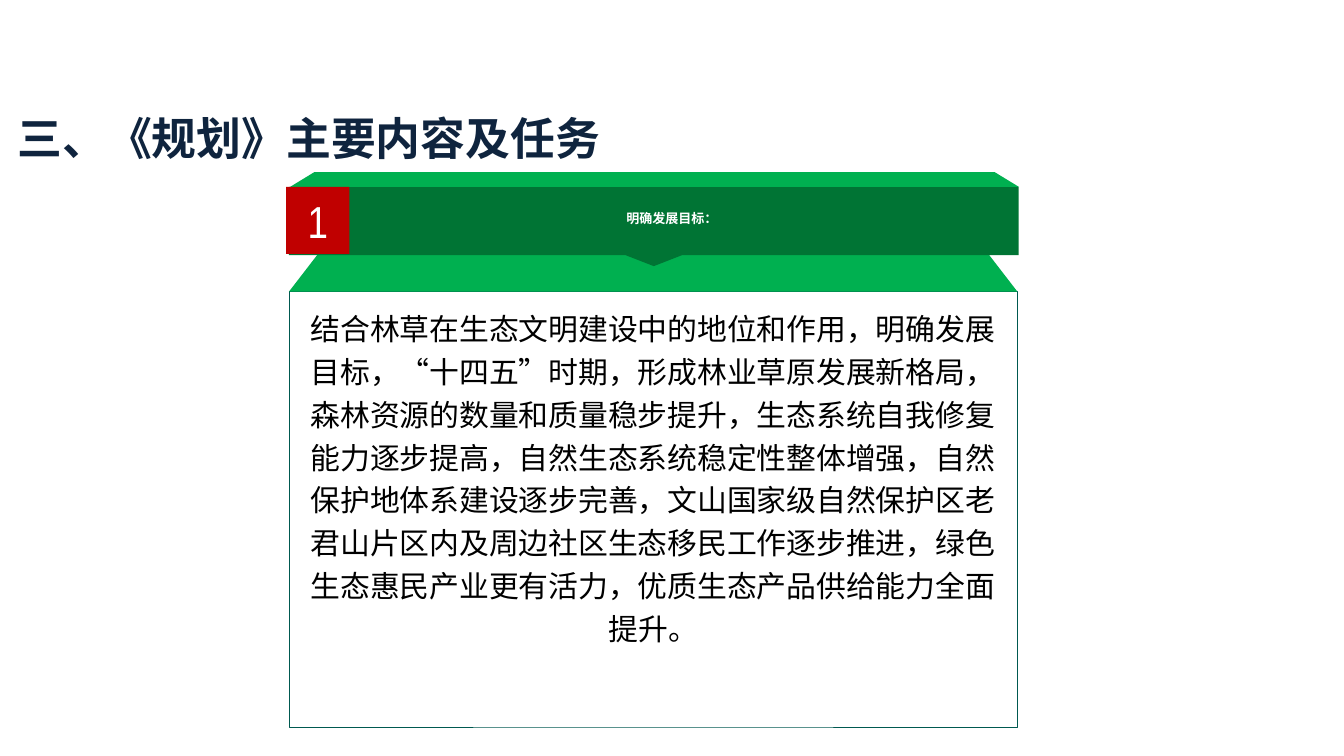
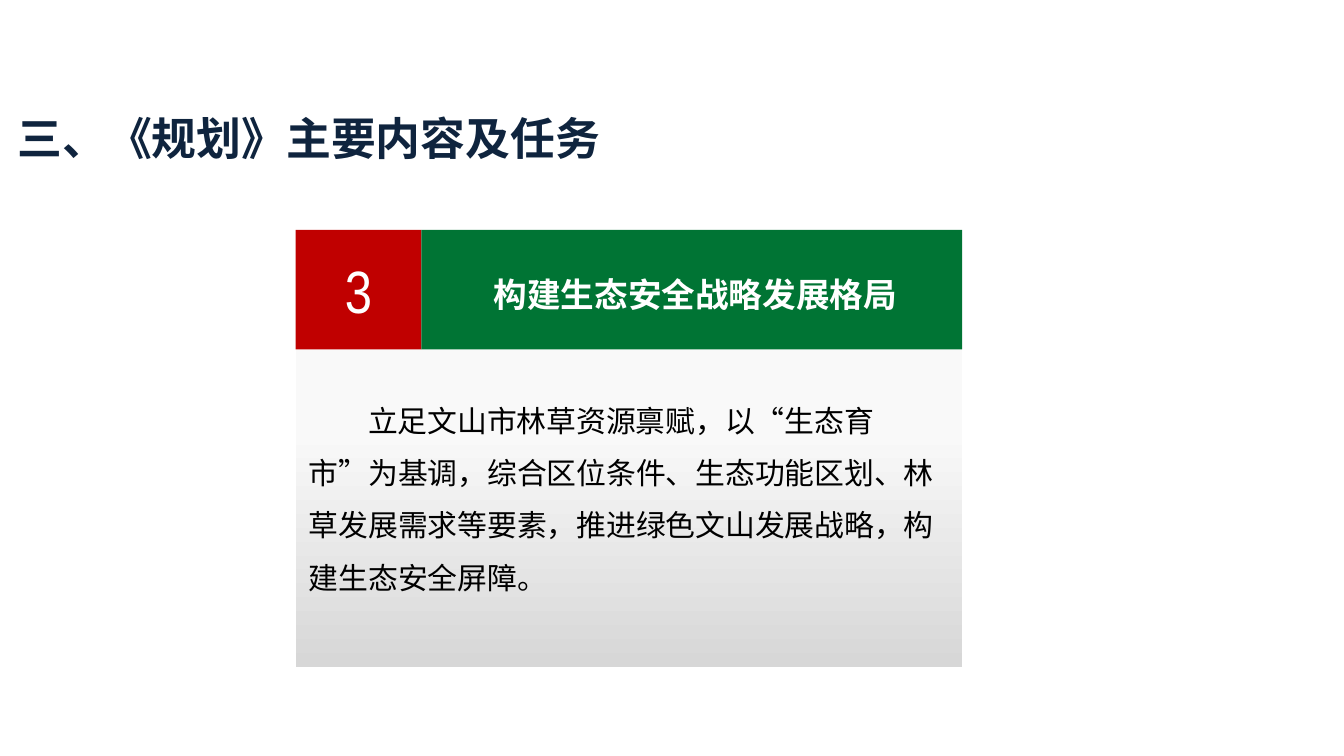
from copy import deepcopy

from pptx import Presentation
from pptx.dml.color import RGBColor
from pptx.enum.lang import MSO_LANGUAGE_ID
from pptx.enum.shapes import MSO_SHAPE
from pptx.enum.text import MSO_ANCHOR, MSO_AUTO_SIZE, PP_ALIGN
from pptx.oxml.ns import qn
from pptx.util import Inches, Pt

RECT = MSO_SHAPE.RECTANGLE
CALLOUT = MSO_SHAPE.DOWN_ARROW_CALLOUT
LEFT, CENTER = PP_ALIGN.LEFT, PP_ALIGN.CENTER
MIDDLE, TOP = MSO_ANCHOR.MIDDLE, MSO_ANCHOR.TOP
CHINESE = MSO_LANGUAGE_ID.SIMPLIFIED_CHINESE

COLS, ROWS, CELL = 100, 56.25, 0.1
SANS, SERIF, NARROW = "Noto Sans CJK SC", "Times New Roman", "Arial Narrow"
NAVY, DEEP, BRIGHT, RED = "0F243E", "007434", "00B050", "C00000"
EDGE, WHITE, BLACK = "005950", "FFFFFF", "000000"
GRADIENT = [(0, "F9F9F9"), (0.33, "F9F9F9"), (1, "D7D7D7")]

TITLE = "三、《规划》主要内容及任务"
GOALS = (
    "结合林草在生态文明建设中的地位和作用，明确发展目标，“十四五”时期，"
    "形成林业草原发展新格局，森林资源的数量和质量稳步提升，"
    "生态系统自我修复能力逐步提高，自然生态系统稳定性整体增强，"
    "自然保护地体系建设逐步完善，"
    "文山国家级自然保护区老君山片区内及周边社区生态移民工作逐步推进，"
    "绿色生态惠民产业更有活力，优质生态产品供给能力全面提升。"
)
PATTERN = (
    "立足文山市林草资源禀赋，以“生态育市”为基调，"
    "综合区位条件、生态功能区划、林草发展需求等要素，"
    "推进绿色文山发展战略，构建生态安全屏障。"
)


def grid(*cells):
    return [Inches(c * CELL) for c in cells]


def rgb(color):
    return RGBColor.from_string(color)


def write(sp, text, size, font, color, bold=False, align=CENTER,
          spacing=None, indent=0, anchor=MIDDLE, wrap=True):
    tf = sp.text_frame
    tf.word_wrap = wrap
    tf.vertical_anchor = anchor
    p = tf.paragraphs[0]
    p.alignment = align
    if spacing:
        p.line_spacing = spacing
    if indent:
        p._p.get_or_add_pPr().set("indent", str(Inches(indent * CELL)))
    r = p.add_run()
    r.text = text
    r.font.size = Pt(size)
    r.font.bold = bold
    r.font.name = font
    r.font.language_id = CHINESE
    r.font.color.rgb = rgb(color)
    ea = r._r.rPr.makeelement(qn("a:ea"), {"typeface": SANS})
    r._r.rPr.find(qn("a:latin")).addnext(ea)


def paint(sp, fill=None, line=None):
    sp.shadow.inherit = False
    if fill:
        sp.fill.solid()
        sp.fill.fore_color.rgb = rgb(fill)
    else:
        sp.fill.background()
    if line:
        sp.line.color.rgb = rgb(line)
        sp.line.width = Pt(0.25)
    else:
        sp.line.fill.background()
    return sp


def block(s, box, fill=None, line=None, kind=RECT):
    return paint(s.shapes.add_shape(kind, *grid(*box)), fill, line)


def shade(sp, stops):
    sp.fill.gradient()
    sp.fill.gradient_angle = 270
    first = sp._element.spPr.find(qn("a:gradFill")).find(qn("a:gsLst"))[0]
    for _ in stops[2:]:
        first.addnext(deepcopy(first))
    for stop, (position, color) in zip(sp.fill.gradient_stops, stops):
        stop.position = position
        stop.color.rgb = rgb(color)


def flap(s, box, inset):
    x, y, w, h = box
    points = [(x + inset, y), (x + w - inset, y), (x + w, y + h), (x, y + h)]
    points = [tuple(grid(*point)) for point in points]
    outline = s.shapes.build_freeform(*points[0])
    outline.add_line_segments(points[1:], close=True)
    return paint(outline.convert_to_shape(), BRIGHT)


def label(s, box, *args, **kwargs):
    sp = s.shapes.add_textbox(*grid(*box))
    write(sp, *args, **kwargs)
    return sp


def number(s, box, text, size):
    write(block(s, box, RED), text, size, NARROW, WHITE)


def titled_slide(prs):
    s = prs.slides.add_slide(prs.slide_layouts[5])
    sp = s.shapes.title
    sp.left, sp.top, sp.width, sp.height = grid(0.3, 7.7, 46.6, 5)
    write(sp, TITLE, 24, SANS, NAVY, bold=True, align=LEFT)
    sp.text_frame.auto_size = MSO_AUTO_SIZE.NONE
    return s


def goals_slide(prs):
    s = titled_slide(prs)
    x, w, top, band = 21.5, 54.2, 21.7, 13.9
    block(s, (x, top, w, 32.4), line=EDGE)
    flap(s, (x, top - 3.5, w, 3.5), 2.7)
    body = label(s, (x, top, w, 31.3), GOALS, 16, SERIF, BLACK, spacing=1.2)
    body.text_frame.margin_bottom = Inches(0.45)
    callout = block(s, (x, band, w + 0.1, 5.9), DEEP, kind=CALLOUT)
    for i, value in enumerate((0.73, 0.36, 0.14, 0.86)):
        callout.adjustments[i] = value
    flap(s, (x + 0.1, band - 1.1, w, 1.1), 1.8)
    label(s, (38.3, 15.2, 23.4, 2.5), "明确发展目标：", 7, SANS, WHITE,
          bold=True, anchor=TOP, wrap=False)
    number(s, (21.3, band, 4.7, 5), "1", 24)


def pattern_slide(prs):
    s = titled_slide(prs)
    x, top, w, head, tab = 22, 17.1, 49.6, 8.9, 9.35
    body = block(s, (x, 23.4, w, 26.2))
    shade(body, GRADIENT)
    write(body, PATTERN, 16, SERIF, BLACK, align=LEFT,
          spacing=Pt(28), indent=4.4)
    number(s, (x, top, tab, head), "3", 32)
    band = block(s, (x + tab, top, w - tab, head), DEEP)
    write(band, "构建生态安全战略发展格局", 18, SANS, WHITE, bold=True,
          align=LEFT, spacing=1.2, indent=4.4)


def main():
    prs = Presentation()
    prs.slide_width, prs.slide_height = grid(COLS, ROWS)
    goals_slide(prs)
    pattern_slide(prs)
    prs.save("out.pptx")


if __name__ == "__main__":
    main()
